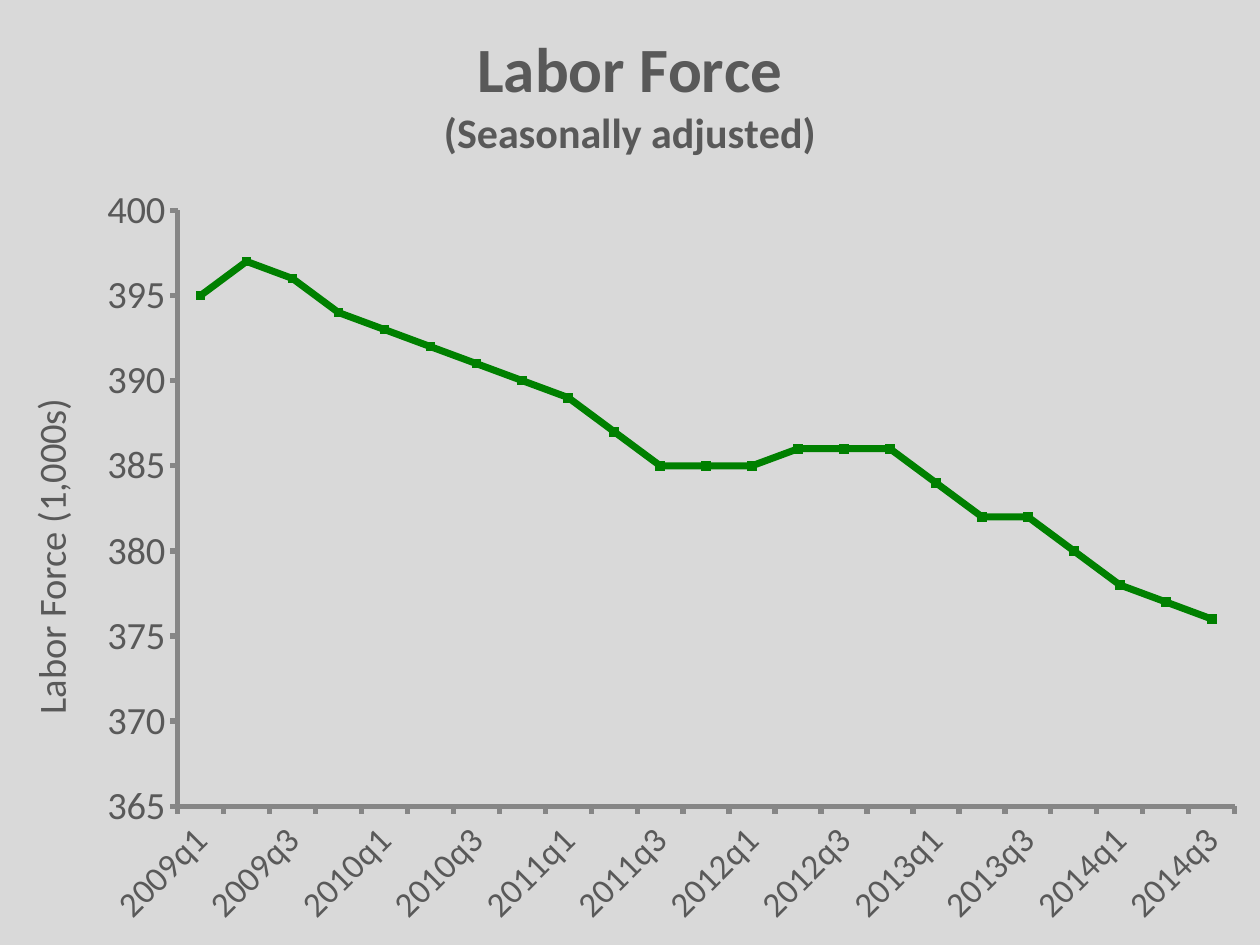
from lxml import etree
from pptx import Presentation
from pptx.chart.data import CategoryChartData
from pptx.dml.color import RGBColor
from pptx.enum.chart import XL_CHART_TYPE, XL_MARKER_STYLE, XL_TICK_MARK
from pptx.oxml.ns import qn
from pptx.util import Inches, Pt

LINE = XL_CHART_TYPE.LINE_MARKERS
SQUARE = XL_MARKER_STYLE.SQUARE
OUT, NONE = XL_TICK_MARK.OUTSIDE, XL_TICK_MARK.NONE
FONT = "Calibri"
COLORS = {"back": "D9D9D9", "text": "595959", "axis": "868686", "line": "008000"}
WIDTH, HEIGHT = Inches(10), Inches(7.5)

FORCE = [395, 397, 396, 394, 393, 392, 391, 390, 389, 387, 385, 385,
         385, 386, 386, 386, 384, 382, 382, 380, 378, 377, 376]
QUARTERS = [f"{2009 + i // 4}q{i % 4 + 1}" for i in range(len(FORCE))]


def color(name):
    return RGBColor.from_string(COLORS[name])


def style(font, size, bold=False):
    font.name, font.size, font.bold = FONT, Pt(size), bold
    font.color.rgb = color("text")


def add_fill(parent, name):
    """Give a chart part a solid fill and no outline."""
    props = etree.SubElement(parent, qn("c:spPr"))
    fill = etree.SubElement(props, qn("a:solidFill"))
    etree.SubElement(fill, qn("a:srgbClr"), val=COLORS[name])
    line = etree.SubElement(props, qn("a:ln"))
    etree.SubElement(line, qn("a:noFill"))
    return props


def set_layout(parent, index, box, inner=False, **place):
    """Place a chart part by lengths within the chart's box."""
    for old in parent.findall(qn("c:layout")):
        parent.remove(old)
    layout = etree.Element(qn("c:layout"))
    manual = etree.SubElement(layout, qn("c:manualLayout"))
    if inner:
        etree.SubElement(manual, qn("c:layoutTarget"), val="inner")
    for key in ("xMode", "yMode"):
        etree.SubElement(manual, qn(f"c:{key}"), val="edge")
    width, height = box
    for key, length in place.items():
        share = length / (width if key in "xw" else height)
        etree.SubElement(manual, qn(f"c:{key}"), val=str(share))
    parent.insert(index, layout)


def style_axis(axis, size):
    axis.has_major_gridlines = False
    axis.major_tick_mark, axis.minor_tick_mark = OUT, NONE
    axis.format.line.color.rgb = color("axis")
    axis.format.line.width = Pt(3)
    style(axis.tick_labels.font, size)


def add_title(chart):
    chart.has_title = True
    frame = chart.chart_title.text_frame
    frame.text = "Labor Force\n(Seasonally adjusted)"
    for part, size in zip(frame.paragraphs, (36, 24)):
        style(part.font, size, True)
        for run in part.runs:
            style(run.font, size, True)
    chart.chart_title.include_in_layout = False


def add_axes(chart, box):
    # Quarters: every second label, slanted
    cat = chart.category_axis
    style_axis(cat, 20)
    node = cat._element
    node.find(qn("c:txPr")).find(qn("a:bodyPr")).set("rot", "-2700000")
    skip = etree.Element(qn("c:tickLblSkip"), val="2")
    node.find(qn("c:noMultiLvlLbl")).addprevious(skip)

    # Labor force scale
    val = chart.value_axis
    style_axis(val, 22)
    val.minimum_scale, val.maximum_scale, val.major_unit = 365, 400, 5
    val.tick_labels.number_format = "General"
    val.tick_labels.number_format_is_linked = False
    frame = val.axis_title.text_frame
    frame.text = "Labor Force (1,000s)"
    style(frame.paragraphs[0].font, 22)
    style(frame.paragraphs[0].runs[0].font, 22)
    body = frame._txBody.find(qn("a:bodyPr"))
    body.set("rot", "-5400000")
    body.set("vert", "horz")
    set_layout(val.axis_title._element, 1, box,
               x=Inches(0.14), y=Inches(3.11))


def add_force_chart(slide, left, top, width, height):
    box = (width, height)
    data = CategoryChartData()
    data.categories = QUARTERS
    data.add_series("Series 1", FORCE)
    chart = slide.shapes.add_chart(LINE, left, top, width, height, data).chart
    chart.has_legend = False
    chart.font.name, chart.font.size = FONT, Pt(10)
    add_title(chart)
    add_axes(chart, box)

    # Series
    plot = chart.plots[0]
    plot.vary_by_categories = False
    series = plot.series[0]
    series.smooth = False
    series.format.line.color.rgb = color("line")
    series.format.line.width = Pt(4)
    mark = series.marker
    mark.style, mark.size = SQUARE, 5
    mark.format.fill.solid()
    mark.format.fill.fore_color.rgb = color("line")
    mark.format.line.color.rgb = color("line")

    # Backgrounds and plot position
    space = chart._chartSpace
    body = space.find(qn("c:chart"))
    body.addnext(add_fill(space, "back"))
    area = body.find(qn("c:plotArea"))
    add_fill(area, "back")
    set_layout(area, 0, box, inner=True, x=Inches(1.41), y=Inches(1.67),
               w=Inches(8.39), h=Inches(4.73))


def main():
    deck = Presentation()
    deck.slide_width, deck.slide_height = WIDTH, HEIGHT
    slide = deck.slides.add_slide(deck.slide_layouts[6])
    add_force_chart(slide, 0, 0, WIDTH, HEIGHT)
    deck.save("out.pptx")


if __name__ == "__main__":
    main()
